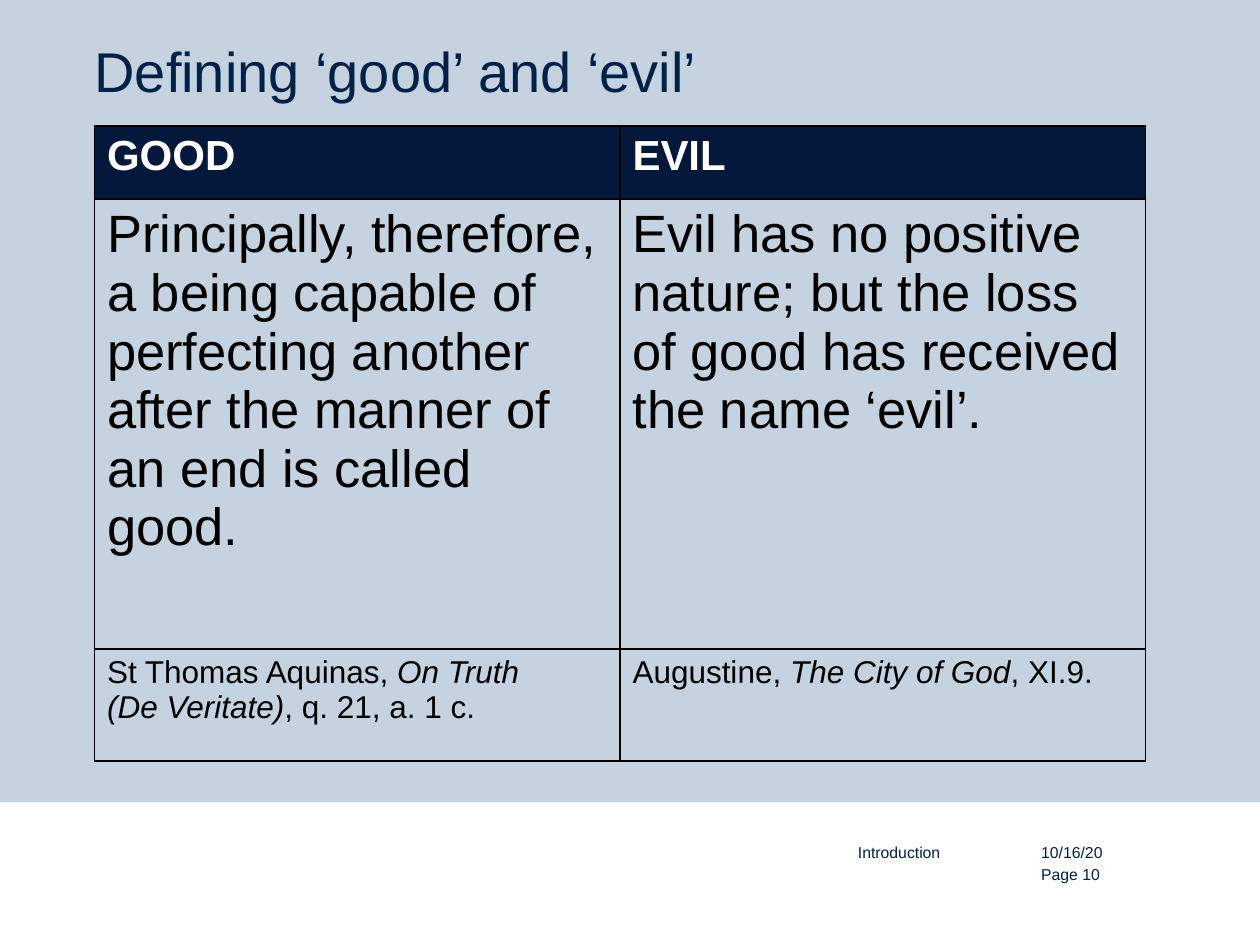
from dataclasses import dataclass

from lxml.etree import SubElement as Sub
from pptx import Presentation
from pptx.dml.color import RGBColor as RGB
from pptx.enum.shapes import MSO_SHAPE as Shape
from pptx.oxml.ns import qn
from pptx.util import Pt


@dataclass(frozen=True)
class Theme:
    font: str = "Arial"
    back: str = "C5D2E0"
    white: str = "FFFFFF"
    black: str = "000000"
    navy: str = "002147"
    head: str = "04183B"
    title: int = 32
    label: int = 24
    quote: int = 30
    source: int = 18
    foot: int = 9


T = Theme()

# Each cell is a list of (text, italic) parts; "\n" is a line break.
ROWS = [
    (41.8, T.label, T.white, T.head, True,
     [[("GOOD", False)], [("EVIL", False)]]),
    (257, T.quote, T.black, T.back, False,
     [[("Principally, therefore, a being capable of perfecting another "
        "after the manner of an end is called good.", False)],
      [("Evil has no positive nature; but the loss of good has received "
        "the name ‘evil’.", False)]]),
    (64.1, T.source, T.black, T.back, False,
     [[("St Thomas Aquinas, ", False), ("On Truth\n(De Veritate)", True),
       (", q. 21, a. 1 c.", False)],
      [("Augustine, ", False), ("The City of God", True),
       (", XI.9.", False)]]),
]


def paint(fill, color):
    fill.solid()
    fill.fore_color.rgb = RGB.from_string(color)


def style(font, size, color, bold=False, italic=False):
    font.name, font.size = T.font, Pt(size)
    font.bold, font.italic = bold, italic
    font.color.rgb = RGB.from_string(color)


def add_text(slide, box, text, size, lead):
    """Add one navy line without margins, with exact line spacing."""
    frame = slide.shapes.add_textbox(*map(Pt, box)).text_frame
    frame.word_wrap = True
    frame.margin_left = frame.margin_right = 0
    frame.margin_top = frame.margin_bottom = 0
    frame.text = text
    para = frame.paragraphs[0]
    para.line_spacing = Pt(lead)
    style(para.runs[0].font, size, T.navy)


def add_edges(cell):
    """Draw a thin black line on all four sides; lines precede the fill."""
    props = cell._tc.get_or_add_tcPr()
    for tag in ("a:lnL", "a:lnR", "a:lnT", "a:lnB"):
        line = Sub(props, qn(tag), w=str(Pt(1)))
        Sub(Sub(line, qn("a:solidFill")), qn("a:srgbClr"), val=T.black)


def fill_cell(cell, parts, size, color, back, bold):
    add_edges(cell)
    paint(cell.fill, back)
    para = cell.text_frame.paragraphs[0]
    for text, italic in parts:
        for i, line in enumerate(text.split("\n")):
            if i:
                para.add_line_break()
            run = para.add_run()
            run.text = line
            style(run.font, size, color, bold, italic)


def add_quotes(slide, box):
    """Add the table of definitions, with equal columns."""
    left, top, width, height = box
    table = slide.shapes.add_table(len(ROWS), 2, *map(Pt, box)).table
    table.horz_banding = False
    for col in table.columns:
        col.width = Pt(width / 2)
    for row, (high, size, color, back, bold, cells) in zip(table.rows, ROWS):
        row.height = Pt(high)
        for cell, parts in zip(row.cells, cells):
            fill_cell(cell, parts, size, color, back, bold)


def add_footer(slide, box):
    left, top, width, height = box
    band = slide.shapes.add_shape(Shape.RECTANGLE, *map(Pt, box))
    band.shadow.inherit = False
    paint(band.fill, T.white)
    band.line.fill.background()
    notes = [("10/16/20", 595, 21.6, 107, 36),
             ("Page 10", 595, 34.6, 107, 20),
             ("Introduction", 490.3, 21.6, 91.5, 42.5)]
    for text, x, y, w, h in notes:
        add_text(slide, (left + x, top + y, w, h), text, T.foot, 12)


def main():
    deck = Presentation()
    deck.slide_width, deck.slide_height = Pt(720), Pt(540)
    slide = deck.slides.add_slide(deck.slide_layouts[6])
    paint(slide.background.fill, T.back)
    add_footer(slide, (0, 458.6, 720, 81.4))
    high = sum(row[0] for row in ROWS)
    add_quotes(slide, (54, 72, 600.5, high))
    add_text(slide, (54, 22.3, 612, 73.4), "Defining ‘good’ and ‘evil’",
             T.title, 37)
    deck.save("out.pptx")


if __name__ == "__main__":
    main()
